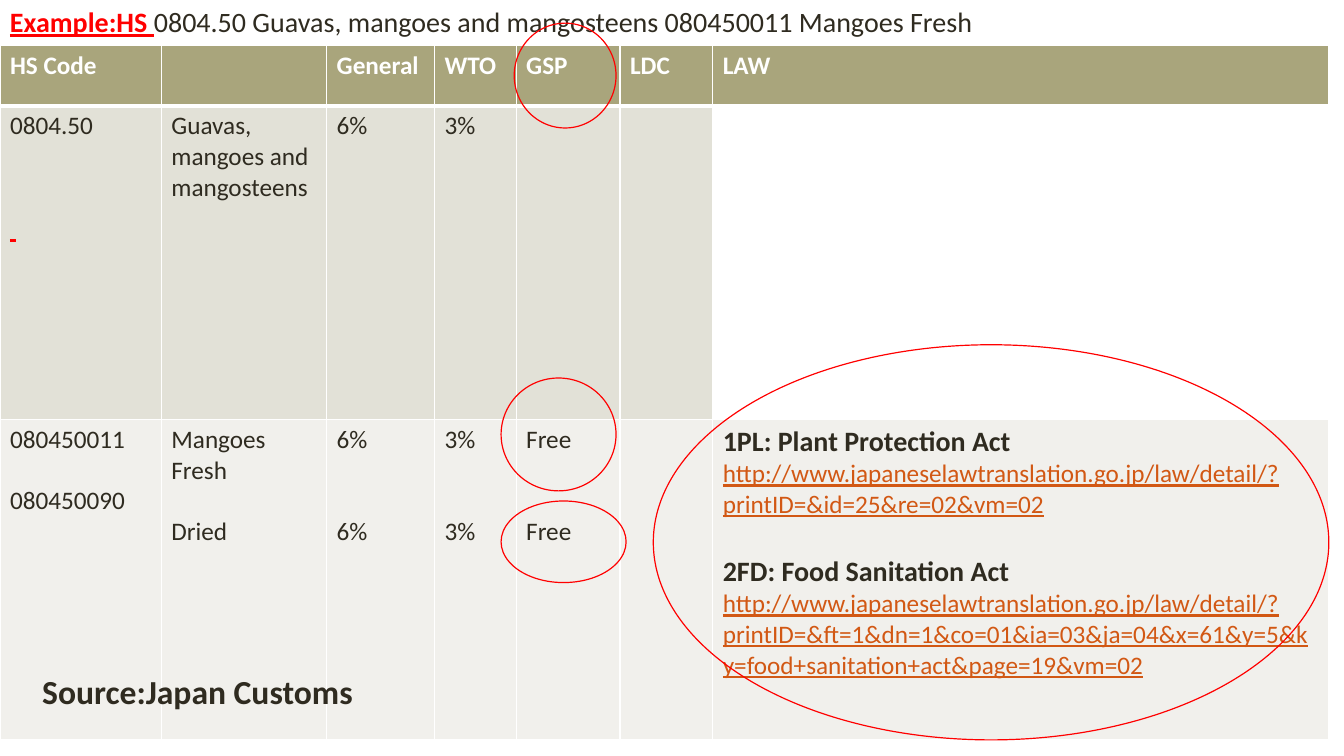
from dataclasses import dataclass

from pptx import Presentation
from pptx.dml.color import RGBColor
from pptx.enum.shapes import MSO_SHAPE
from pptx.oxml import parse_xml
from pptx.oxml.ns import nsdecls
from pptx.slide import Slide
from pptx.table import _Cell as Cell
from pptx.text.text import TextFrame
from pptx.util import Inches, Pt

FONT = "Calibri"
WHITE, INK, RED, LINK = "FFFFFF", "2F2B20", "FF0000", "D25814"
HEADER_FILL, GROUP_FILL, ITEM_FILL = "A9A57C", "E2E1D7", "F1F0EC"
LINE_SPACING = 1.22  # height of a text line relative to its font size


@dataclass(frozen=True)
class Style:
    size: int = 18
    color: str = INK
    bold: bool = False
    underline: bool = False


@dataclass(frozen=True)
class Line:
    """One paragraph; gap is the number of empty lines above it."""
    text: str
    style: Style = Style()
    gap: int = 0


@dataclass(frozen=True)
class Ring:
    left: float
    top: float
    width: float
    height: float


BODY = Style()
HEADER = Style(color=WHITE, bold=True)
LAW = Style(size=20, bold=True)
URL = Style(color=LINK, underline=True)
TITLE = Style(size=20)
TITLE_MARK = Style(size=20, color=RED, bold=True, underline=True)
SOURCE = Style(size=24, bold=True)

COLUMN_WIDTHS = [1.6, 1.64, 1.07, 0.81, 1.03, 0.92, 6.11]
ROW_HEIGHTS = [0.6, 3.11, 3.18]
ROW_FILLS = [HEADER_FILL, GROUP_FILL, ITEM_FILL]

HEADINGS = ["HS Code", "", "General", "WTO", "GSP", "LDC", "LAW"]
GROUP = ["0804.50", "Guavas, mangoes and mangosteens", "6%", "3%", "", "", ""]
LAW_SITE = "http://www.japaneselawtranslation.go.jp/law/detail/"
LAWS = [
    Line("1PL: Plant Protection Act", LAW),
    Line(LAW_SITE + "?printID=&id=25&re=02&vm=02", URL),
    Line("2FD: Food Sanitation Act", LAW, gap=1),
    Line(LAW_SITE + "?printID=&ft=1&dn=1&co=01&ia=03&ja=04&x=61&y=5"
         "&ky=food+sanitation+act&page=19&vm=02", URL),
]


def rate_pair(rate: str) -> list[Line]:
    """The same rate for fresh and for dried mangoes."""
    return [Line(rate), Line(rate, gap=2)]


ROWS: list[list[list[Line]]] = [
    [[Line(text, HEADER)] for text in HEADINGS],
    [[Line(text)] for text in GROUP],
    [
        [Line("080450011"), Line("080450090", gap=1)],
        [Line("Mangoes"), Line("Fresh"), Line("Dried", gap=1)],
        rate_pair("6%"),
        rate_pair("3%"),
        rate_pair("Free"),
        [Line("")],
        LAWS,
    ],
]

RINGS = [
    Ring(5.1, 0.23, 1.01, 1.04),
    Ring(4.97, 3.75, 1.14, 1.12),
    Ring(4.97, 4.97, 1.24, 0.81),
    Ring(6.48, 3.42, 6.7, 3.92),
]


def rgb(color: str) -> RGBColor:
    return RGBColor.from_string(color)


def format_font(font, style: Style) -> None:
    font.name = FONT
    font.size = Pt(style.size)
    font.bold = style.bold
    font.underline = style.underline
    font.color.rgb = rgb(style.color)


def write_lines(frame: TextFrame, lines: list[Line]) -> None:
    frame.text = "\n".join(line.text for line in lines)
    for para, line in zip(frame.paragraphs, lines):
        if line.gap:
            para.space_before = Pt(line.gap * line.style.size * LINE_SPACING)
        format_font(para.font, line.style)
        for run in para.runs:
            format_font(run.font, line.style)


def add_borders(cell: Cell, bottom: int) -> None:
    properties = cell._tc.get_or_add_tcPr()
    for side, points in (("L", 1), ("R", 1), ("T", 1), ("B", bottom)):
        properties.append(parse_xml(
            f'<a:ln{side} {nsdecls("a")} w="{Pt(points)}"><a:solidFill>'
            f'<a:srgbClr val="{WHITE}"/></a:solidFill></a:ln{side}>'))


def add_tariff_table(page: Slide) -> None:
    table = page.shapes.add_table(
        len(ROW_HEIGHTS), len(COLUMN_WIDTHS), Inches(0), Inches(0.45),
        Inches(sum(COLUMN_WIDTHS)), Inches(sum(ROW_HEIGHTS))).table
    table.horz_banding = False
    for column, width in zip(table.columns, COLUMN_WIDTHS):
        column.width = Inches(width)
    for index, (row, height) in enumerate(zip(table.rows, ROW_HEIGHTS)):
        row.height = Inches(height)
        for cell, lines in zip(row.cells, ROWS[index]):
            write_lines(cell.text_frame, lines)
            add_borders(cell, bottom=3 if index == 0 else 1)
            cell.fill.solid()
            cell.fill.fore_color.rgb = rgb(ROW_FILLS[index])
    table.cell(1, len(COLUMN_WIDTHS) - 1).fill.background()


def add_ring(page: Slide, ring: Ring) -> None:
    oval = page.shapes.add_shape(
        MSO_SHAPE.OVAL, Inches(ring.left), Inches(ring.top),
        Inches(ring.width), Inches(ring.height))
    oval.shadow.inherit = False
    oval.fill.background()
    oval.line.color.rgb = rgb(RED)
    oval.line.width = Pt(0.85)


def add_text(page: Slide, left: float, top: float, width: float,
             height: float, lines: list[Line]) -> TextFrame:
    box = page.shapes.add_textbox(
        Inches(left), Inches(top), Inches(width), Inches(height))
    box.text_frame.word_wrap = True
    write_lines(box.text_frame, lines)
    return box.text_frame


def main() -> None:
    deck = Presentation()
    deck.slide_width, deck.slide_height = Inches(13.33), Inches(7.5)
    page = deck.slides.add_slide(deck.slide_layouts[6])

    add_tariff_table(page)
    title = add_text(page, 0, 0, 12.72, 2.46, [
        Line("Example:HS ", TITLE_MARK), Line(" ", TITLE_MARK, gap=5)])
    product = title.paragraphs[0].add_run()
    product.text = "0804.50 Guavas, mangoes and mangosteens 080450011 Mangoes Fresh"
    format_font(product.font, TITLE)
    for ring in RINGS:
        add_ring(page, ring)
    add_text(page, 0.32, 6.61, 4.3, 0.5, [Line("Source:Japan Customs", SOURCE)])

    deck.save("out.pptx")


if __name__ == "__main__":
    main()
